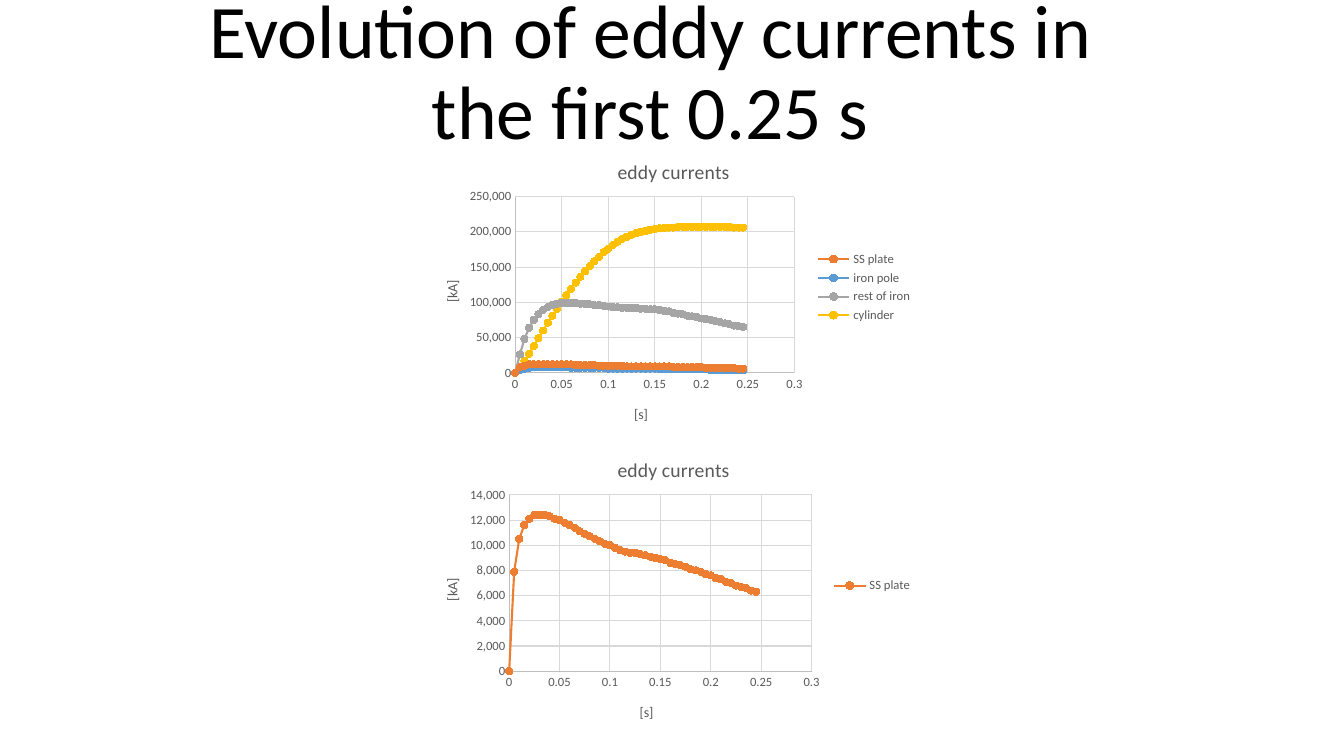
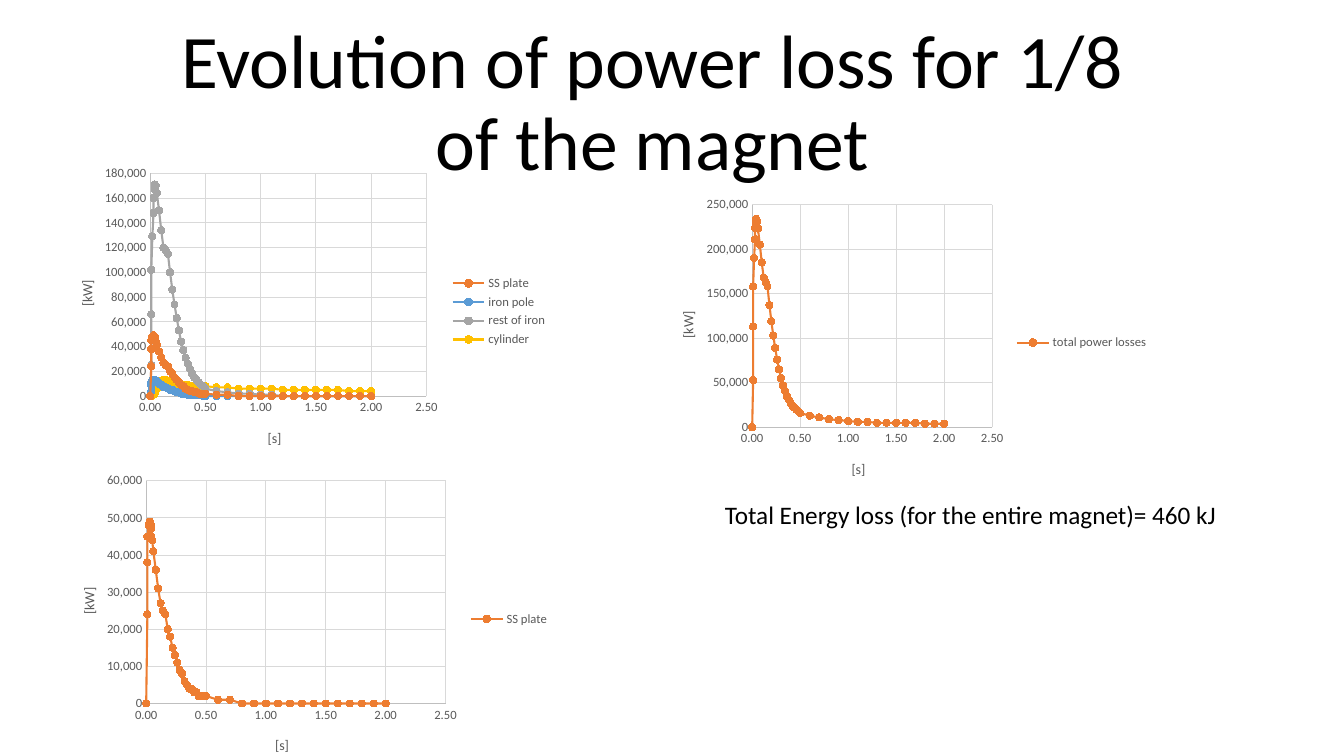
from lxml import etree
from pptx import Presentation
from pptx.chart.data import XyChartData
from pptx.dml.color import RGBColor
from pptx.enum.chart import (XL_CHART_TYPE, XL_LEGEND_POSITION,
                             XL_MARKER_STYLE, XL_TICK_MARK)
from pptx.enum.text import MSO_ANCHOR, MSO_AUTO_SIZE, PP_ALIGN
from pptx.oxml.ns import qn
from pptx.util import Inches, Pt

SCATTER = XL_CHART_TYPE.XY_SCATTER_LINES
LEGEND_RIGHT = XL_LEGEND_POSITION.RIGHT
CIRCLE = XL_MARKER_STYLE.CIRCLE
NO_TICK = XL_TICK_MARK.NONE
BOTTOM = MSO_ANCHOR.BOTTOM
NO_FIT = MSO_AUTO_SIZE.NONE
CENTER = PP_ALIGN.CENTER

FONT = "Calibri"
BLACK = RGBColor(0x00, 0x00, 0x00)
GRAY_TEXT = RGBColor(0x59, 0x59, 0x59)
AXIS_GRAY = RGBColor(0xBF, 0xBF, 0xBF)
GRID_GRAY = RGBColor(0xD9, 0xD9, 0xD9)
ORANGE = RGBColor(0xED, 0x7D, 0x31)
BLUE = RGBColor(0x5B, 0x9B, 0xD5)
SILVER = RGBColor(0xA5, 0xA5, 0xA5)
GOLD = RGBColor(0xFF, 0xC0, 0x00)
SERIES_COLORS = {"SS plate": ORANGE, "iron pole": BLUE, "rest of iron": SILVER,
                 "cylinder": GOLD, "total power losses": ORANGE}

CHART_WIDTH, CHART_HEIGHT = 5, 3

# Times in seconds
CURRENT_TIMES = [round(step * 0.005, 3) for step in range(50)]
LOSS_TIMES = ([0, 0.01, 0.01, 0.01, 0.02, 0.03, 0.03, 0.04, 0.04, 0.04, 0.05]
              + [step / 100 for step in range(6, 51, 2)]
              + [step / 10 for step in range(6, 21)])

# Series values in thousands
CURRENTS = {
    "SS plate": [0, 8, 10] + [12] * 10 + [11] * 5 + [10] * 6 + [9] * 10
                + [8] * 7 + [7] * 7 + [6] * 2,
    "iron pole": [0, 4, 6, 7] + [8] * 8 + [7] * 8 + [6] * 11 + [5] * 11 + [4] * 8,
    "rest of iron": [
        0, 26, 48, 64, 75, 83, 89, 93, 96, 98, 99, 99, 99, 99, 98, 98, 97, 96, 96,
        95, 94, 93, 93, 92, 92, 92, 92, 91, 91, 90, 90, 89, 88, 87, 85, 84, 83, 81,
        80, 79, 77, 76, 75, 73, 72, 70, 69, 67, 66, 65],
    "cylinder": [
        0, 7, 17, 27, 38, 49, 60, 71, 81, 91, 101, 110, 119, 128, 136, 144, 151,
        158, 164, 171, 176, 181, 186, 190, 193, 196, 198, 200, 201, 203, 204, 205,
        205, 206, 206] + [207] * 12 + [206] * 3,
}
PLATE_CURRENT = {"SS plate": [
    0, 7.9, 10.5, 11.6, 12.1, 12.4, 12.4, 12.4, 12.3, 12.1, 12, 11.8, 11.6, 11.4,
    11.1, 10.9, 10.7, 10.5, 10.3, 10.1, 10, 9.8, 9.6, 9.5, 9.4, 9.4, 9.3, 9.2, 9.1,
    9, 8.9, 8.8, 8.6, 8.5, 8.4, 8.3, 8.1, 8, 7.9, 7.7, 7.6, 7.4, 7.3, 7.1, 7, 6.8,
    6.7, 6.6, 6.4, 6.3]}
PLATE_LOSS = {"SS plate": [
    0, 24, 38, 45, 48, 49, 49, 48, 47, 45, 44, 41, 36, 31, 27, 25, 24, 20, 18, 15,
    13, 11, 9, 8, 6, 5, 4, 4, 3, 3, 2, 2, 2, 2, 1, 1] + [0] * 13}
LOSSES = {
    **PLATE_LOSS,
    "iron pole": [
        0, 4, 9, 11, 13, 13, 13, 13, 13, 13, 12, 12, 10, 9, 7, 7, 6, 5, 5, 4, 3, 3,
        2, 2, 2] + [1] * 7 + [0] * 17,
    "rest of iron": [
        0, 25, 66, 102, 129, 148, 160, 167, 171, 171, 170, 164, 150, 134, 120, 118,
        115, 100, 86, 74, 63, 53, 44, 37, 31, 26, 22, 18, 15, 13, 11, 9, 8, 6, 4, 3,
        2, 2, 1, 1] + [0] * 9,
    "cylinder": [
        0, 0, 0, 0, 1, 1, 2, 2, 3, 4, 5, 6, 9, 12, 13, 13, 12, 11, 11, 10, 10]
        + [9] * 5 + [8] * 8 + [7] * 2 + [6] * 4 + [5] * 6 + [4] * 3,
}
TOTAL_LOSS = {"total power losses": [
    0, 53, 113, 158, 190, 211, 224, 231, 234, 233, 231, 223, 205, 185, 168, 163,
    158, 137, 119, 103, 89, 76, 65, 55, 47, 41, 35, 31, 27, 24, 22, 20, 18, 16, 13,
    11, 9, 8, 7, 6, 6, 5, 5, 5, 5, 5, 4, 4, 4]}

# Settings shared by the charts of one slide
CURRENT_STYLE = dict(times=CURRENT_TIMES, unit="[kA]", title="eddy currents",
                     time_scale=(0.3, 0.05), time_format="General",
                     plot_top=0.6, plot_height=1.75)
LOSS_STYLE = dict(times=LOSS_TIMES, unit="[kW]", title=None,
                  time_scale=(2.5, 0.5), time_format="#,##0.00",
                  plot_top=0.13, plot_height=2.21)

# Chart: place, series, (maximum, step) of values, left and width of the plot
SLIDES = [
    dict(title="Evolution of eddy currents in the first 0.25 s",
         title_at=(1.45, 0.91), style=CURRENT_STYLE, notes=[],
         charts=[((4.15, 1.35), CURRENTS, (250000, 50000), (0.96, 2.77)),
                 ((4.15, 4.31), PLATE_CURRENT, (14000, 2000), (0.9, 3))]),
    dict(title="Evolution of power loss for 1/8 of the magnet",
         title_at=(1.47, 1.21), style=LOSS_STYLE,
         notes=[((7.09, 4.9), "Total Energy loss (for the entire magnet)= 460 kJ")],
         charts=[((0.53, 1.59), LOSSES, (180000, 20000), (0.96, 2.74)),
                 ((0.55, 4.64), PLATE_LOSS, (60000, 10000), (0.9, 2.97)),
                 ((6.49, 1.9), TOTAL_LOSS, (250000, 50000), (0.97, 2.38))]),
]


def format_font(font, size, color):
    font.name, font.size, font.bold = FONT, Pt(size), False
    font.color.rgb = color


def write_text(frame, text, size=18, color=BLACK, align=None, spacing=None):
    para = frame.paragraphs[0]
    if align is not None:
        para.alignment = align
    if spacing is not None:
        para.line_spacing = spacing
    span = para.add_run()
    span.text = text
    format_font(span.font, size, color)


def format_line(line, color, width):
    line.color.rgb = color
    line.width = Pt(width)


def set_layout(parent, after, left, top, width=None, height=None):
    """Place a chart part, in inches from the chart's corner."""
    for old in parent.findall(qn("c:layout")):
        parent.remove(old)
    layout = etree.Element(qn("c:layout"))
    manual = etree.SubElement(layout, qn("c:manualLayout"))
    values = [("xMode", "edge"), ("yMode", "edge"),
              ("x", left / CHART_WIDTH), ("y", top / CHART_HEIGHT)]
    if width is not None:
        values = ([("layoutTarget", "inner")] + values
                  + [("w", width / CHART_WIDTH), ("h", height / CHART_HEIGHT)])
    for tag, value in values:
        etree.SubElement(manual, qn("c:" + tag)).set("val", str(value))
    if after is None:
        parent.insert(0, layout)
    else:
        parent.find(qn(after)).addnext(layout)


def format_axis(axis, scale, number_format, text, title_at):
    axis.minimum_scale = 0
    axis.maximum_scale, axis.major_unit = scale
    axis.major_tick_mark = axis.minor_tick_mark = NO_TICK
    axis.tick_labels.number_format = number_format
    axis.tick_labels.number_format_is_linked = False
    format_font(axis.tick_labels.font, 9, GRAY_TEXT)
    format_line(axis.format.line, AXIS_GRAY, 0.75)
    axis.has_major_gridlines = True
    format_line(axis.major_gridlines.format.line, GRID_GRAY, 0.75)
    write_text(axis.axis_title.text_frame, text, size=10, color=GRAY_TEXT)
    set_layout(axis.axis_title._element, "c:tx", *title_at)


def add_scatter(slide, place, series, value_scale, plot_span, *, times, unit, title,
                time_scale, time_format, plot_top, plot_height):
    data = XyChartData()
    for name, thousands in series.items():
        points = data.add_series(name)
        for time, value in zip(times, thousands):
            points.add_data_point(time, round(value * 1000))
    chart = slide.shapes.add_chart(
        SCATTER, *map(Inches, place), Inches(CHART_WIDTH), Inches(CHART_HEIGHT),
        data).chart
    format_font(chart.font, 10, BLACK)

    # Chart title and legend
    chart.has_title = title is not None
    if title:
        write_text(chart.chart_title.text_frame, title, size=14, color=GRAY_TEXT)
        set_layout(chart.chart_title._element, "c:tx", 1.94, 0.18)
    chart.has_legend = True
    chart.legend.position = LEGEND_RIGHT
    chart.legend.include_in_layout = False
    format_font(chart.legend.font, 9, GRAY_TEXT)

    # Axes and plot area
    plot_left, plot_width = plot_span
    format_axis(chart.category_axis, time_scale, time_format, "[s]",
                (plot_left + plot_width / 2 - 0.23, 2.64))
    format_axis(chart.value_axis, value_scale, "#,##0", unit,
                (0.22, plot_top + plot_height / 2 - 0.07))
    body = chart.value_axis.axis_title._element.find(".//" + qn("a:bodyPr"))
    body.set("rot", "-5400000")
    body.set("vert", "horz")
    plot_area = chart._chartSpace.find(".//" + qn("c:plotArea"))
    set_layout(plot_area, None, plot_left, plot_top, plot_width, plot_height)

    # Lines and markers
    chart.plots[0].vary_by_categories = False
    for line in chart.plots[0].series:
        color = SERIES_COLORS[line.name]
        line.smooth = False
        format_line(line.format.line, color, 1.5)
        line.marker.style, line.marker.size = CIRCLE, 5
        line.marker.format.fill.solid()
        line.marker.format.fill.fore_color.rgb = color
        format_line(line.marker.format.line, color, 0.75)


def add_title(slide, text, place):
    box = slide.shapes.title
    box.left, box.top = map(Inches, place)
    box.width, box.height = Inches(10), Inches(0.69)
    frame = box.text_frame
    frame.word_wrap, frame.auto_size = True, NO_FIT
    frame.vertical_anchor = BOTTOM
    write_text(frame, text, size=54, align=CENTER, spacing=0.9)


def main():
    deck = Presentation()
    deck.slide_width, deck.slide_height = Inches(13.33), Inches(7.5)
    title_only = deck.slide_layouts[5]
    for page in SLIDES:
        slide = deck.slides.add_slide(title_only)
        add_title(slide, page["title"], page["title_at"])
        for chart in page["charts"]:
            add_scatter(slide, *chart, **page["style"])
        for place, text in page["notes"]:
            box = slide.shapes.add_textbox(*map(Inches, place), Inches(5.24), Inches(0.4))
            box.text_frame.word_wrap = False
            write_text(box.text_frame, text)
    deck.save("out.pptx")


if __name__ == "__main__":
    main()
